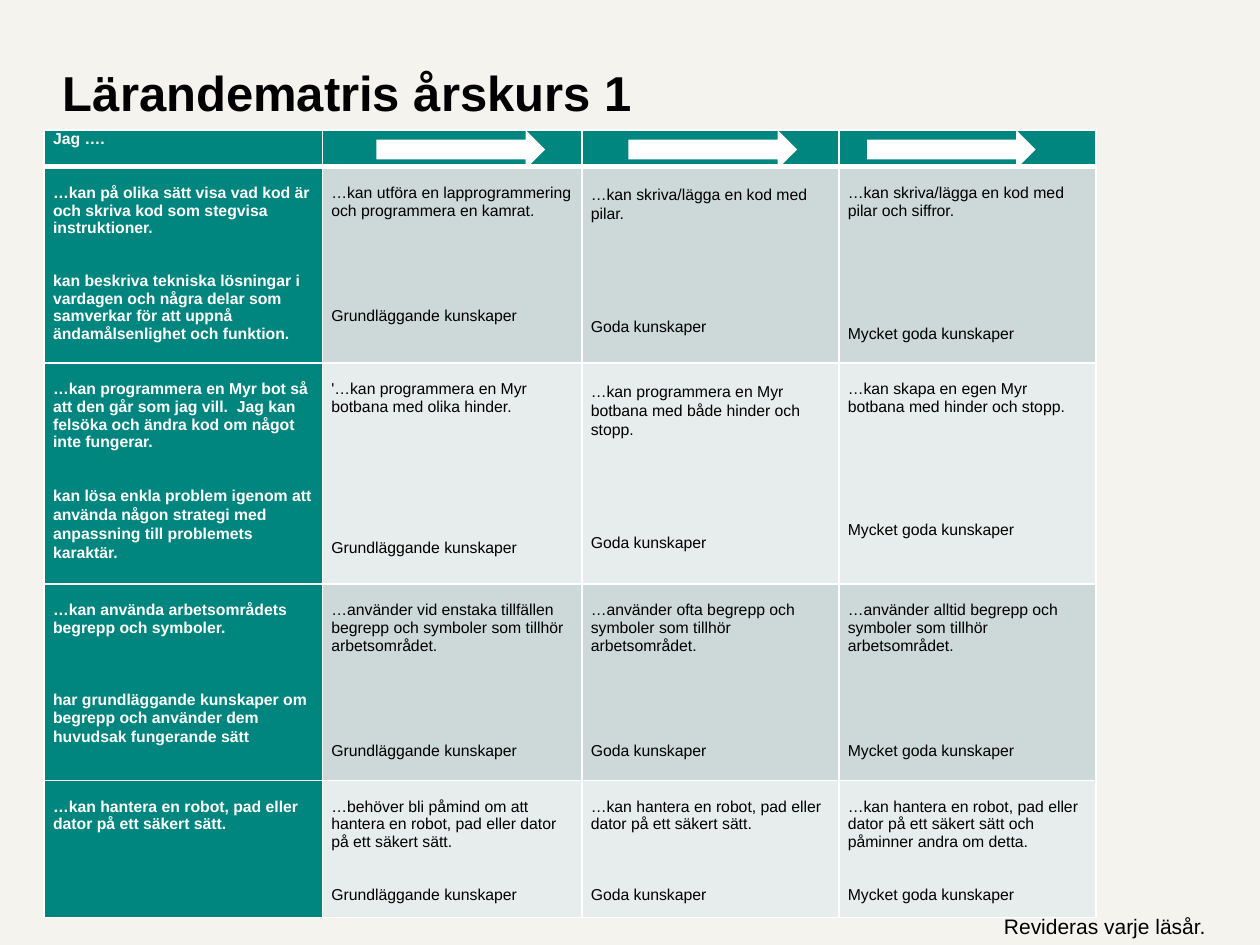
import pptx
import pptx.util
import pptx.dml.color
import pptx.enum.shapes
import pptx.oxml.ns
import lxml.etree

Cm, Pt = pptx.util.Cm, pptx.util.Pt
RGB = pptx.dml.color.RGBColor
TEAL = RGB(0x00, 0x86, 0x7F)
DARK = RGB(0xCC, 0xD9, 0xD8)
LIGHT = RGB(0xE7, 0xED, 0xEC)
PAPER = RGB(0xF5, 0xF3, 0xEE)
WHITE = RGB(0xFF, 0xFF, 0xFF)
BLACK = RGB(0, 0, 0)

TITLE = "Lärandematris årskurs 1"
NOTE = "Revideras varje läsår."
HEAD = "Jag …."
BASIC, GOOD, BEST = "Grundläggande kunskaper", "Goda kunskaper", "Mycket goda kunskaper"

# Each cell: upper text, lower text, lines between, line spacing of each text
GOALS = [
    [("…kan på olika sätt visa vad kod är och skriva kod som stegvisa instruktioner.",
      "kan beskriva tekniska lösningar i vardagen och några delar som samverkar "
      "för att uppnå ändamålsenlighet och funktion.", 2, 1, 1),
     ("…kan utföra en lapprogrammering och programmera en kamrat.", BASIC, 5, 1, 1),
     ("…kan skriva/lägga en kod med pilar.", GOOD, 5, 1.07, 1.07),
     ("…kan skriva/lägga en kod med pilar och siffror.", BEST, 6, 1, 1)],
    [("…kan programmera en Myr bot så att den går som jag vill.  Jag kan felsöka "
      "och ändra kod om något inte fungerar.",
      "kan lösa enkla problem igenom att använda någon strategi med anpassning "
      "till problemets karaktär.", 2, 1, 1.07),
     ("'…kan programmera en Myr botbana med olika hinder.", BASIC, 7, 1, 1),
     ("…kan programmera en Myr botbana med både hinder och stopp.", GOOD, 5, 1.07, 1.07),
     ("…kan skapa en egen Myr botbana med hinder och stopp.", BEST, 6, 1, 1)],
    [("…kan använda arbetsområdets begrepp och symboler.",
      "har grundläggande kunskaper om begrepp och använder dem huvudsak "
      "fungerande sätt", 3, 1, 1.07),
     ("…använder vid enstaka tillfällen begrepp och symboler som tillhör "
      "arbetsområdet.", BASIC, 5, 1, 1),
     ("…använder ofta begrepp och symboler som tillhör arbetsområdet.", GOOD, 5, 1, 1),
     ("…använder alltid begrepp och symboler som tillhör arbetsområdet.", BEST, 5, 1, 1)],
    [("…kan hantera en robot, pad eller dator på ett säkert sätt.", "", 0, 1, 1),
     ("…behöver bli påmind om att hantera en robot, pad eller dator på ett "
      "säkert sätt.", BASIC, 2, 1, 1),
     ("…kan hantera en robot, pad eller dator på ett säkert sätt.", GOOD, 3, 1, 1),
     ("…kan hantera en robot, pad eller dator på ett säkert sätt och påminner "
      "andra om detta.", BEST, 2, 1, 1)],
]
COLS = [5.61, 5.23, 5.18, 5.18]
ROWS = [0.74, 3.96, 4.45, 3.96, 2.77]
LEFT, TOP = 0.89, 2.62
ARROWS = [7.59, 12.67, 17.48]
LINE = 10.06


def put(par, text, size, color, bold=False):
    run = par.add_run()
    run.text = text
    font = run.font
    font.name, font.size, font.bold = "Arial", Pt(size), bold
    font.color.rgb = color


def edge(cell, low):
    props = cell._tc.get_or_add_tcPr()
    qn = pptx.oxml.ns.qn
    for i, side in enumerate("LRTB"):
        line = lxml.etree.Element(qn("a:ln" + side), w=str(Pt(low if side == "B" else 1)))
        fill = lxml.etree.SubElement(line, qn("a:solidFill"))
        lxml.etree.SubElement(fill, qn("a:srgbClr"), val=str(WHITE))
        props.insert(i, line)


def label(slide, text, box, size, bold, inset, wrap):
    frame = slide.shapes.add_textbox(*[Cm(v) for v in box]).text_frame
    frame.word_wrap = wrap
    if not inset:
        frame.margin_left = frame.margin_right = 0
        frame.margin_top = frame.margin_bottom = 0
    put(frame.paragraphs[0], text, size, BLACK, bold)


def fill_cell(cell, goal, color, bold):
    upper, lower, gap, first, last = goal
    cell.margin_top = Pt(LINE * first)
    frame = cell.text_frame
    par = frame.paragraphs[0]
    par.line_spacing = first
    put(par, upper, 9, color, bold)
    if lower:
        par = frame.add_paragraph()
        par.line_spacing = last
        par.space_before = Pt(round(gap * LINE * first, 1))
        put(par, lower, 9, color, bold)


def matrix(slide):
    table = slide.shapes.add_table(len(ROWS), len(COLS), Cm(LEFT), Cm(TOP),
                                   Cm(sum(COLS)), Cm(sum(ROWS))).table
    for col, width in zip(table.columns, COLS):
        col.width = Cm(width)
    for r, high in enumerate(ROWS):
        table.rows[r].height = Cm(high)
        for c in range(len(COLS)):
            cell = table.cell(r, c)
            cell.margin_left = cell.margin_right = Cm(0.18)
            cell.margin_top = cell.margin_bottom = 0
            teal = r == 0 or c == 0
            cell.fill.solid()
            cell.fill.fore_color.rgb = TEAL if teal else DARK if r % 2 else LIGHT
            edge(cell, 1 if r else 3)
            if r:
                fill_cell(cell, GOALS[r - 1][c], WHITE if teal else BLACK, teal)
            elif c == 0:
                put(cell.text_frame.paragraphs[0], HEAD, 9, WHITE, True)
            else:
                cell.text_frame.paragraphs[0].font.size = Pt(9)


def main():
    deck = pptx.Presentation()
    deck.slide_width, deck.slide_height = Cm(25.4), Cm(19.05)
    slide = deck.slides.add_slide(deck.slide_layouts[6])
    slide.background.fill.solid()
    slide.background.fill.fore_color.rgb = PAPER
    label(slide, TITLE, (1.27, 1.27, 15.24, 2.46), 28, True, False, True)
    matrix(slide)
    for x in ARROWS:
        arrow = slide.shapes.add_shape(pptx.enum.shapes.MSO_SHAPE.RIGHT_ARROW,
                                       Cm(x), Cm(TOP), Cm(3.4), Cm(0.79))
        arrow.shadow.inherit = False
        arrow.fill.solid()
        arrow.fill.fore_color.rgb = WHITE
        arrow.line.fill.background()
    label(slide, NOTE, (19.99, 18.29, 5, 0.76), 12, False, True, False)
    deck.save("out.pptx")


if __name__ == "__main__":
    main()
